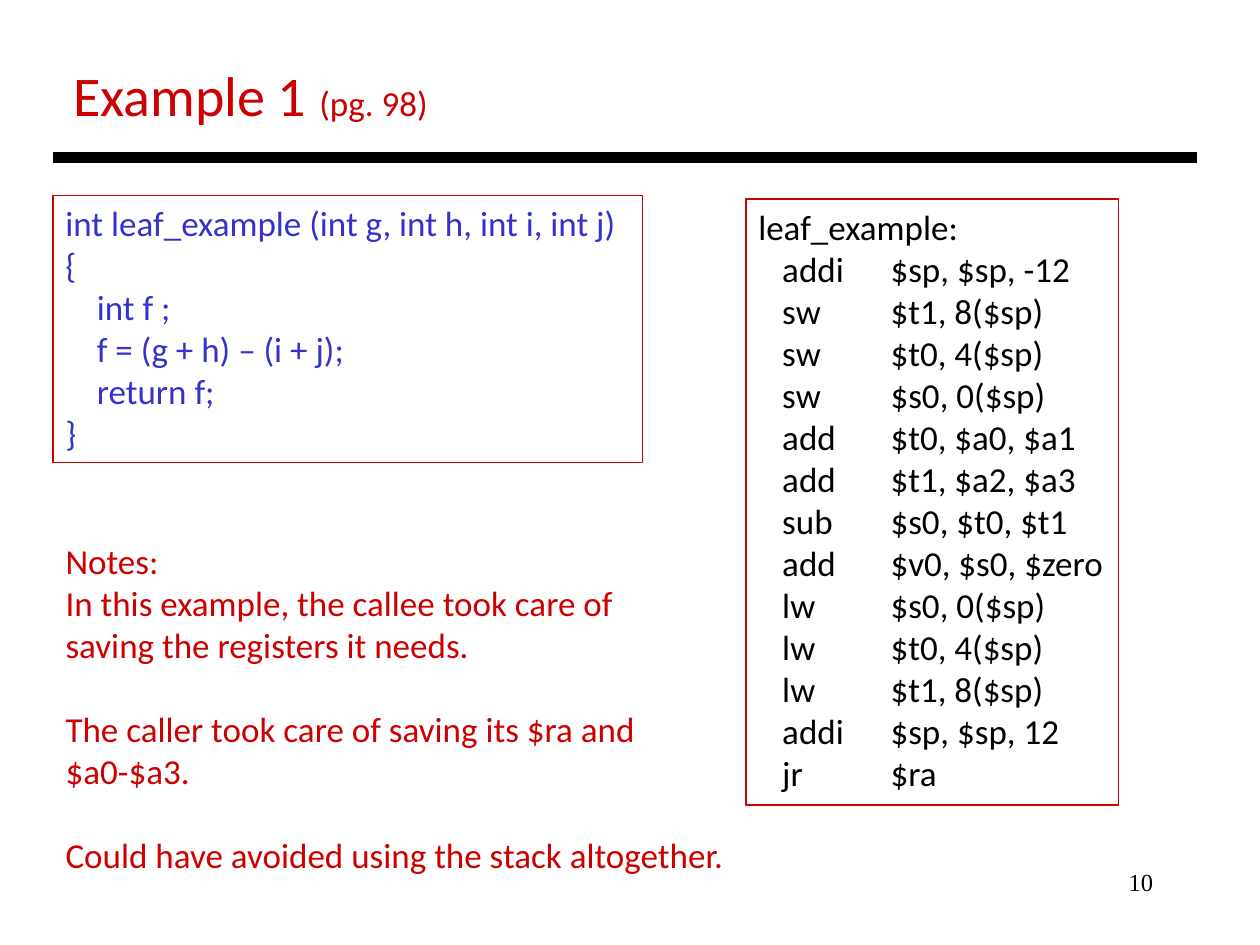
from dataclasses import dataclass

from lxml import etree
from pptx import Presentation
from pptx.dml.color import RGBColor
from pptx.enum.shapes import MSO_CONNECTOR, MSO_SHAPE
from pptx.enum.text import MSO_ANCHOR, MSO_AUTO_SIZE, PP_ALIGN
from pptx.oxml.ns import qn
from pptx.util import Inches, Pt

LEFT, RIGHT = PP_ALIGN.LEFT, PP_ALIGN.RIGHT
TOP, NO_AUTOFIT = MSO_ANCHOR.TOP, MSO_AUTO_SIZE.NONE
RECTANGLE, STRAIGHT = MSO_SHAPE.RECTANGLE, MSO_CONNECTOR.STRAIGHT


@dataclass(frozen=True)
class Theme:
    red: RGBColor = RGBColor(0xCC, 0x00, 0x00)
    blue: RGBColor = RGBColor(0x33, 0x33, 0xCC)
    black: RGBColor = RGBColor(0x00, 0x00, 0x00)
    font: str = "Calibri"
    number_font: str = "Times New Roman"
    title_size: int = 32
    text_size: int = 20
    number_size: int = 14
    paragraph_gap: int = 24
    rule_width: int = 6
    border_width: float = 0.75


THEME = Theme()
MARGIN = 0.42

C_CODE = [
    "int leaf_example (int g, int h, int i, int j)",
    "{",
    "\tint f ;",
    "\tf = (g + h) – (i + j);",
    "\treturn f;",
    "}",
]
INSTRUCTIONS = [
    ("addi", "$sp, $sp, -12"),
    ("sw", "$t1, 8($sp)"),
    ("sw", "$t0, 4($sp)"),
    ("sw", "$s0, 0($sp)"),
    ("add", "$t0, $a0, $a1"),
    ("add", "$t1, $a2, $a3"),
    ("sub", "$s0, $t0, $t1"),
    ("add", "$v0, $s0, $zero"),
    ("lw", "$s0, 0($sp)"),
    ("lw", "$t0, 4($sp)"),
    ("lw", "$t1, 8($sp)"),
    ("addi", "$sp, $sp, 12"),
    ("jr", "$ra"),
]
NOTES = [
    ["Notes:", "In this example, the callee took care of",
     "saving the registers it needs."],
    ["The caller took care of saving its $ra and", "$a0-$a3."],
    ["Could have avoided using the stack altogether."],
]


def place(shape, left, top, width, height):
    shape.left, shape.top = Inches(left), Inches(top)
    shape.width, shape.height = Inches(width), Inches(height)


def add_run(paragraph, text, size=THEME.text_size, color=THEME.black, font=THEME.font):
    run = paragraph.add_run()
    run.text = text
    run.font.size = Pt(size)
    run.font.name = font
    run.font.color.rgb = color


def set_tabs(paragraph, positions):
    tab_list = etree.SubElement(paragraph._p.get_or_add_pPr(), qn("a:tabLst"))
    for position in positions:
        etree.SubElement(tab_list, qn("a:tab"), pos=str(Inches(position)), algn="l")


def remove_bullet(paragraph):
    properties = paragraph._p.get_or_add_pPr()
    properties.set("marL", "0")
    properties.set("indent", "0")
    etree.SubElement(properties, qn("a:buNone"))


def write_lines(shape, lines, align=LEFT, tabs=(), **run_format):
    """Write one paragraph per line and return the paragraphs."""
    frame = shape.text_frame
    frame.word_wrap = False
    frame.auto_size = NO_AUTOFIT
    frame.vertical_anchor = TOP
    paragraphs = []
    for index, line in enumerate(lines):
        paragraph = frame.add_paragraph() if index else frame.paragraphs[0]
        paragraph.alignment = align
        paragraph.space_before = Pt(0)
        if tabs:
            set_tabs(paragraph, tabs)
        add_run(paragraph, line, **run_format)
        paragraphs.append(paragraph)
    return paragraphs


def add_title(slide):
    title = slide.shapes.title
    place(title, 0.48, 0.43, 3.04, 0.64)
    heading, = write_lines(title, ["Example 1 "], size=THEME.title_size, color=THEME.red)
    add_run(heading, "(pg. 98)", color=THEME.red)


def add_rule(slide, left, right, top):
    rule = slide.shapes.add_connector(
        STRAIGHT, Inches(left), Inches(top), Inches(right), Inches(top))
    rule.line.color.rgb = THEME.black
    rule.line.width = Pt(THEME.rule_width)
    etree.SubElement(rule._element.spPr, qn("a:effectLst"))


def add_code_box(slide, bounds, lines, **text_format):
    box = slide.shapes.add_shape(RECTANGLE, *map(Inches, bounds))
    box.shadow.inherit = False
    box.fill.background()
    box.line.color.rgb = THEME.red
    box.line.width = Pt(THEME.border_width)
    write_lines(box, lines, **text_format)


def add_notes_list(slide):
    body = slide.placeholders[1]
    place(body, MARGIN, 4.23, 5.47, 2.79)
    lines = [line for group in NOTES for line in group]
    paragraphs = write_lines(body, lines, color=THEME.red)
    group_starts = {group[0] for group in NOTES[1:]}
    for paragraph, line in zip(paragraphs, lines):
        if line in group_starts:
            paragraph.space_before = Pt(THEME.paragraph_gap)
        remove_bullet(paragraph)


def add_slide_number(slide, number):
    box = slide.shapes.add_textbox(*map(Inches, (7.17, 6.83, 2.08, 0.5)))
    write_lines(box, [number], align=RIGHT,
                size=THEME.number_size, font=THEME.number_font)


def main():
    presentation = Presentation()
    presentation.slide_width, presentation.slide_height = Inches(10), Inches(7.5)
    slide = presentation.slides.add_slide(presentation.slide_layouts[1])
    assembly = ["leaf_example:"] + [f"\t{name}\t{operands}" for name, operands in INSTRUCTIONS]

    add_title(slide)
    add_rule(slide, MARGIN, 9.5, 1.25)
    add_code_box(slide, (MARGIN, 1.55, 4.68, 2.12), C_CODE, tabs=[0.25], color=THEME.blue)
    add_code_box(slide, (5.92, 1.58, 2.96, 4.81), assembly, tabs=[0.19, 1.05])
    add_notes_list(slide)
    add_slide_number(slide, "10")
    presentation.save("out.pptx")


if __name__ == "__main__":
    main()
